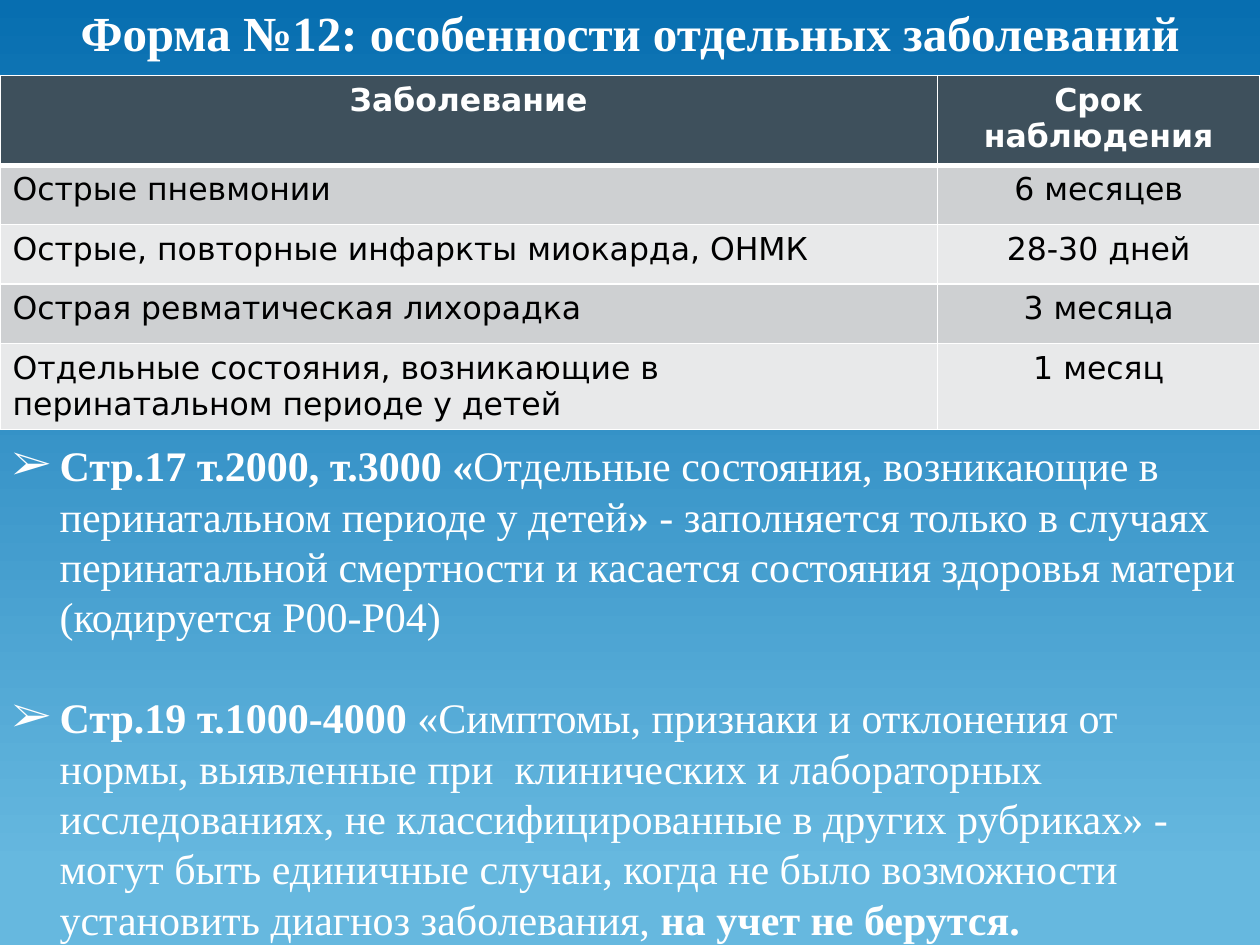
from lxml import etree
from pptx import Presentation
from pptx.dml.color import RGBColor
from pptx.enum.text import MSO_ANCHOR, PP_ALIGN
from pptx.oxml.ns import qn
from pptx.util import Pt

CENTER, LEFT, TOP = PP_ALIGN.CENTER, PP_ALIGN.LEFT, MSO_ANCHOR.TOP
WHITE = RGBColor(0xFF, 0xFF, 0xFF)
BLACK = RGBColor(0, 0, 0)
HEADER_FILL = RGBColor(0x3E, 0x50, 0x5C)
BAND_FILLS = [RGBColor(0xE8, 0xE9, 0xEA), RGBColor(0xCE, 0xD0, 0xD2)]
BACKGROUND_STOPS = [(0, RGBColor(0x07, 0x6E, 0xB0)), (0.92, RGBColor(0x66, 0xB8, 0xDF))]

TABLE_ROWS = [
    ("Заболевание", "Срок наблюдения"),
    ("Острые пневмонии", "6 месяцев"),
    ("Острые, повторные инфаркты миокарда, ОНМК", "28-30 дней"),
    ("Острая ревматическая лихорадка", "3 месяца"),
    ("Отдельные состояния, возникающие в перинатальном периоде у детей", "1 месяц"),
]
COLUMN_WIDTHS = [535.7, 184.3]
ROW_HEIGHTS = [51.2, 34, 34, 34, 49]
NOTES = [
    [
        ("Стр.17 т.2000, т.3000 «", True),
        ("Отдельные состояния, возникающие в перинатальном периоде у детей", False),
        ("» ", True),
        ("- заполняется только в случаях перинатальной смертности и касается "
         "состояния здоровья матери (кодируется Р00-Р04)", False),
    ],
    [
        ("Стр.19 т.1000-4000 ", True),
        ("«Симптомы, признаки и отклонения от нормы, выявленные при  клинических и "
         "лабораторных исследованиях, не классифицированные в других рубриках» - "
         "могут быть единичные случаи, когда не было возможности установить диагноз "
         "заболевания, ", False),
        ("на учет не берутся.", True),
    ],
]


def add_run(paragraph, text, color, **font_format):
    run = paragraph.add_run()
    run.text = text
    run.font.color.rgb = color
    for name, value in font_format.items():
        setattr(run.font, name, value)


def set_borders(cell, widths):
    properties = cell._tc.get_or_add_tcPr()
    for position, (side, width) in enumerate(widths.items()):
        line = etree.Element(qn(f"a:{side}"), w=str(Pt(width)))
        fill = etree.SubElement(line, qn("a:solidFill"))
        etree.SubElement(fill, qn("a:srgbClr"), val=str(WHITE))
        properties.insert(position, line)


presentation = Presentation()
presentation.slide_width, presentation.slide_height = Pt(720), Pt(540)
slide = presentation.slides.add_slide(presentation.slide_layouts[5])

background = slide.background.fill
background.gradient()
background.gradient_angle = 270
for stop, (position, color) in zip(background.gradient_stops, BACKGROUND_STOPS):
    stop.position = position
    stop.color.rgb = color

title = slide.shapes.title
title_box = {"left": Pt(0), "top": Pt(-2), "width": Pt(720), "height": Pt(71)}
for name, value in title_box.items():
    setattr(title, name, value)
title.text_frame.vertical_anchor = TOP
title_paragraph = title.text_frame.paragraphs[0]
title_paragraph.alignment = CENTER
add_run(title_paragraph, "Форма №12: особенности отдельных заболеваний", WHITE,
        name="Times New Roman", size=Pt(28), bold=True)

table = slide.shapes.add_table(
    len(TABLE_ROWS), len(COLUMN_WIDTHS), Pt(0), Pt(43.2), Pt(720), Pt(sum(ROW_HEIGHTS))
).table
for column, width in zip(table.columns, COLUMN_WIDTHS):
    column.width = Pt(width)
for row_index, (texts, height) in enumerate(zip(TABLE_ROWS, ROW_HEIGHTS)):
    table.rows[row_index].height = Pt(height)
    is_header = row_index == 0
    for column_index, text in enumerate(texts):
        cell = table.cell(row_index, column_index)
        cell.fill.solid()
        cell.fill.fore_color.rgb = HEADER_FILL if is_header else BAND_FILLS[row_index % 2]
        paragraph = cell.text_frame.paragraphs[0]
        paragraph.alignment = CENTER if is_header or column_index == 1 else LEFT
        add_run(paragraph, text, WHITE if is_header else BLACK,
                name="DejaVu Sans", size=Pt(18), bold=is_header)
        set_borders(cell, {"lnL": 1, "lnR": 1, "lnT": 3 if row_index == 1 else 1,
                           "lnB": 3 if is_header else 1})

notes_frame = slide.shapes.add_textbox(Pt(0), Pt(247.7), Pt(720), Pt(298)).text_frame
notes_frame.word_wrap = True
for index, runs in enumerate(NOTES):
    paragraph = notes_frame.add_paragraph() if index else notes_frame.paragraphs[0]
    paragraph.space_before = Pt(28.8 if index else 0)
    properties = paragraph._p.get_or_add_pPr()
    properties.set("marL", str(Pt(27)))
    properties.set("indent", str(Pt(-27)))
    etree.SubElement(properties, qn("a:buFont"), typeface="Times New Roman")
    etree.SubElement(properties, qn("a:buChar"), char="➢")
    for text, bold in runs:
        add_run(paragraph, text, WHITE, name="Times New Roman", size=Pt(24), bold=bold)

presentation.save("out.pptx")
